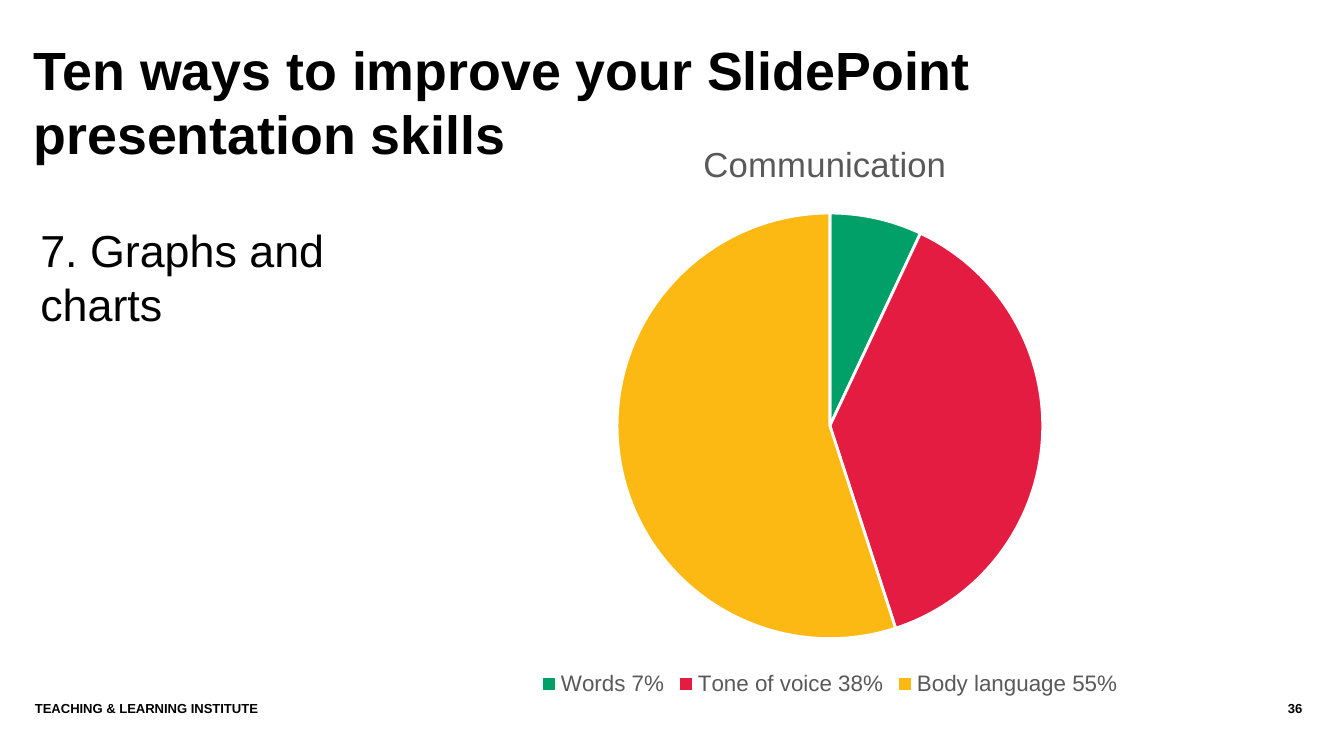
from pptx import Presentation
from pptx.chart.data import CategoryChartData
from pptx.dml.color import RGBColor
from pptx.enum.chart import XL_CHART_TYPE as ChartType, XL_LEGEND_POSITION as LegendPos
from pptx.enum.text import MSO_ANCHOR as Anchor, PP_ALIGN as Align
from pptx.util import Inches, Pt

COLORS = {"text": "000000", "muted": "595959", "white": "FFFFFF",
          "green": "00A068", "red": "E51C41", "yellow": "FDB913"}
FONT = "Arial"
TITLE = "Ten ways to improve your SlidePoint presentation skills"
TOPIC = "7. Graphs and charts"
FOOTER = "TEACHING & LEARNING INSTITUTE"
PAGE = "36"
CHART_TITLE = "Communication "
SLICES = [("Words 7%", 7, "green"),
          ("Tone of voice 38%", 38, "red"),
          ("Body language 55%", 55, "yellow")]


def rgb(name):
    return RGBColor.from_string(COLORS[name])


def style(font, size, color="text", bold=False):
    font.name, font.size, font.bold = FONT, Pt(size), bold
    font.color.rgb = rgb(color)


def add_text(s, text, at, size, sp=None, bold=False, align=Align.LEFT):
    """Write text into a placeholder or a new text box at the given place."""
    sp = sp or s.shapes.add_textbox(0, 0, 0, 0)
    sp.left, sp.top, sp.width, sp.height = map(Inches, at)
    tf = sp.text_frame
    tf.word_wrap, tf.vertical_anchor = True, Anchor.TOP
    tf.margin_left = tf.margin_top = tf.margin_right = tf.margin_bottom = 0
    p = tf.paragraphs[0]
    p.alignment, p.line_spacing = align, 1.0
    r = p.add_run()
    r.text = text
    style(r.font, size, bold=bold)


def add_pie(s, at):
    data = CategoryChartData()
    data.categories = [name for name, _, _ in SLICES]
    data.add_series(CHART_TITLE, [value for _, value, _ in SLICES])
    chart = s.shapes.add_chart(ChartType.PIE, *map(Inches, at), data).chart
    style(chart.font, 10)
    chart.has_title = True
    p = chart.chart_title.text_frame.paragraphs[0]
    r = p.add_run()
    r.text = CHART_TITLE
    style(r.font, 18.6, "muted")
    chart.has_legend = True
    chart.legend.position = LegendPos.BOTTOM
    chart.legend.include_in_layout = False
    style(chart.legend.font, 12, "muted")
    plot = chart.plots[0]
    plot.vary_by_categories = True
    for i, (_, _, color) in enumerate(SLICES):
        fmt = plot.series[0].points[i].format
        fmt.fill.solid()
        fmt.fill.fore_color.rgb = rgb(color)
        fmt.line.color.rgb = rgb("white")
        fmt.line.width = Pt(1.5)


def main():
    prs = Presentation()
    prs.slide_width = Inches(10)
    prs.slide_height = prs.slide_width * 9 // 16
    s = prs.slides.add_slide(prs.slide_layouts[5])
    s.background.fill.solid()
    s.background.fill.fore_color.rgb = rgb("white")
    add_text(s, TITLE, (0.25, 0.27, 9.23, 0.76), 28.8, sp=s.shapes.title, bold=True)
    add_text(s, TOPIC, (0.3, 1.66, 2.67, 0.81), 24)
    add_pie(s, (2.84, 0.86, 6.67, 4.36))
    add_text(s, FOOTER, (0.26, 5.21, 8.41, 0.3), 7, bold=True)
    add_text(s, PAGE, (8.7, 5.21, 0.99, 0.3), 7, bold=True, align=Align.RIGHT)
    prs.save("out.pptx")


if __name__ == "__main__":
    main()
